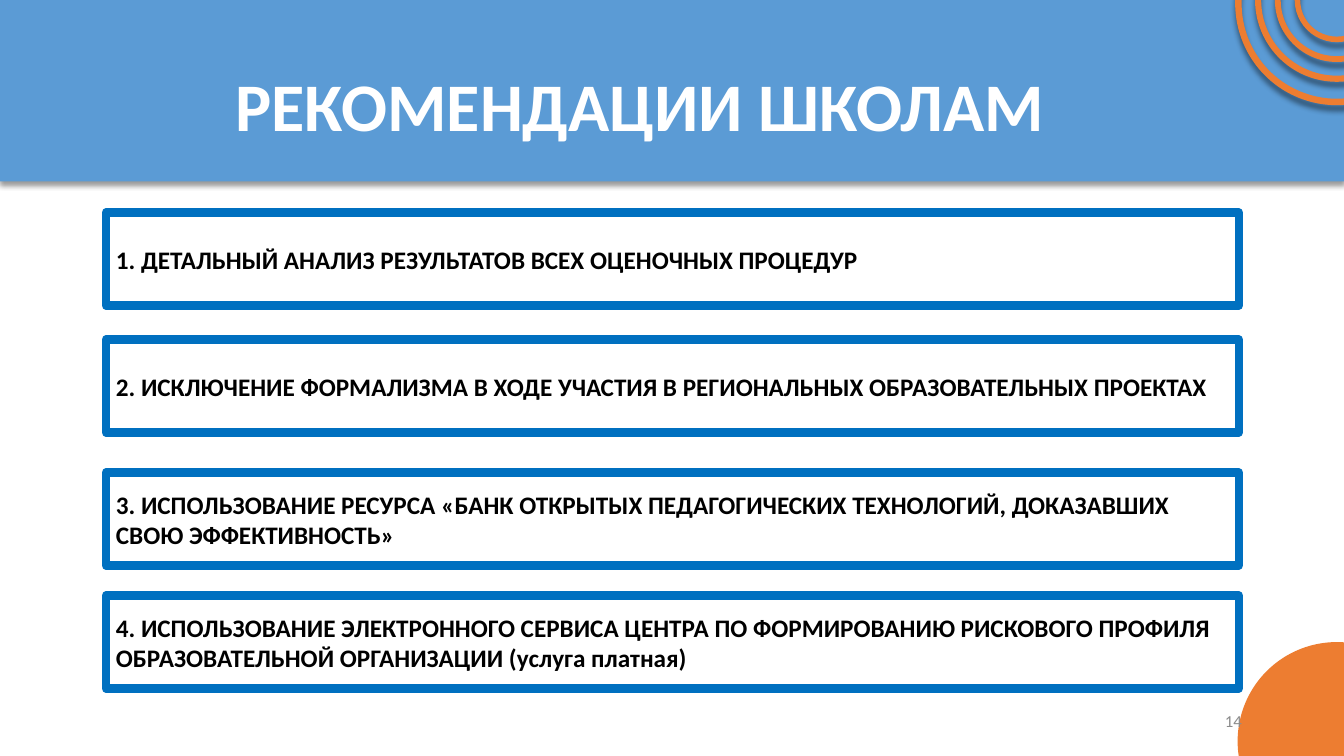
from dataclasses import dataclass

from lxml.etree import SubElement
from pptx import Presentation
from pptx.dml.color import RGBColor as RGB
from pptx.enum.shapes import MSO_SHAPE as SHAPE
from pptx.enum.text import MSO_ANCHOR as ANCHOR, PP_ALIGN as ALIGN
from pptx.oxml.ns import qn
from pptx.util import Cm, Pt


@dataclass(frozen=True)
class Theme:
    """Colours, font and type sizes of the slide."""
    band: str = "5B9BD5"
    accent: str = "ED7D31"
    border: str = "0070C0"
    paper: str = "FFFFFF"
    ink: str = "000000"
    muted: str = "8C8C8C"
    font: str = "Calibri"
    title: float = 48.6
    body: float = 18
    number: float = 12


T = Theme()
RECOMMENDATIONS = (
    (5.36, "1. ДЕТАЛЬНЫЙ АНАЛИЗ РЕЗУЛЬТАТОВ ВСЕХ ОЦЕНОЧНЫХ ПРОЦЕДУР"),
    (8.56, "2. ИСКЛЮЧЕНИЕ ФОРМАЛИЗМА В ХОДЕ УЧАСТИЯ В РЕГИОНАЛЬНЫХ "
           "ОБРАЗОВАТЕЛЬНЫХ ПРОЕКТАХ"),
    (11.91, "3. ИСПОЛЬЗОВАНИЕ РЕСУРСА «БАНК ОТКРЫТЫХ ПЕДАГОГИЧЕСКИХ "
            "ТЕХНОЛОГИЙ, ДОКАЗАВШИХ СВОЮ ЭФФЕКТИВНОСТЬ»"),
    (15.01, "4. ИСПОЛЬЗОВАНИЕ ЭЛЕКТРОННОГО СЕРВИСА ЦЕНТРА ПО ФОРМИРОВАНИЮ "
            "РИСКОВОГО ПРОФИЛЯ ОБРАЗОВАТЕЛЬНОЙ ОРГАНИЗАЦИИ (услуга платная)"),
)


def add_shape(s, kind, box, fill, line=None, width=0):
    """Add a flat preset shape in a box given in centimetres."""
    sp = s.shapes.add_shape(kind, *map(Cm, box))
    sp.fill.solid()
    sp.fill.fore_color.rgb = RGB.from_string(fill)
    if line:
        sp.line.color.rgb = RGB.from_string(line)
        sp.line.width = Pt(width)
    else:
        sp.line.fill.background()
    sp.shadow.inherit = False
    return sp


def add_shadow(sp, blur, dist, alpha):
    """Cast a soft black shadow straight down."""
    effects = sp._element.spPr.find(qn("a:effectLst"))
    shadow = SubElement(effects, qn("a:outerShdw"), blurRad=str(Pt(blur)),
                        dist=str(Pt(dist)), dir="5400000", rotWithShape="0")
    color = SubElement(shadow, qn("a:srgbClr"), val="000000")
    SubElement(color, qn("a:alpha"), val=str(alpha * 1000))


def set_text(sp, text, align, size, color, bold=True):
    """Write one vertically centred paragraph into a shape."""
    tf = sp.text_frame
    tf.word_wrap = True
    tf.vertical_anchor = ANCHOR.MIDDLE
    p = tf.paragraphs[0]
    p.alignment = align
    r = p.add_run()
    r.text = text
    r.font.color.rgb = RGB.from_string(color)
    for name, value in {"name": T.font, "size": Pt(size), "bold": bold}.items():
        setattr(r.font, name, value)


def add_header(s, x, y, w, h):
    """Draw the title band."""
    band = add_shape(s, SHAPE.RECTANGLE, (x, y, w, h), T.band)
    add_shadow(band, 4, 3, 40)
    title = s.shapes.add_textbox(Cm(x + 1.52), Cm(y + 1.32), Cm(29.21), Cm(2.6))
    set_text(title, "РЕКОМЕНДАЦИИ ШКОЛАМ", ALIGN.CENTER, T.title, T.paper)


def add_corners(s, x, y, w, h):
    """Draw the disc and the rings around the right-hand corners."""
    cx = x + w - 0.18
    add_shape(s, SHAPE.OVAL, (cx - 2.5, y + h - 2.87, 5, 5), T.accent)
    for size, drop in ((5, 0.09), (4, 0), (3, 0), (2, 0)):
        box = (cx - size / 2, y + drop - size / 2, size, size)
        ring = add_shape(s, SHAPE.DONUT, box, T.accent, T.accent, 3.5)
        ring.adjustments[0] = 0.008
        add_shadow(ring, 4, 4, 43)


def add_recommendations(s, x, w, h):
    """Stack the framed recommendations."""
    for y, text in RECOMMENDATIONS:
        frame = add_shape(s, SHAPE.RECTANGLE, (x, y, w, h), T.paper, T.border, 6)
        set_text(frame, text, ALIGN.LEFT, T.body, T.ink)


def add_number(s, x, y, w, h):
    """Write the page number."""
    box = s.shapes.add_textbox(*map(Cm, (x, y, w, h)))
    set_text(box, "14", ALIGN.RIGHT, T.number, T.muted, False)


def main():
    """Build and save the slide."""
    width, height = 33.87, 19.05
    prs = Presentation()
    prs.slide_width, prs.slide_height = Cm(width), Cm(height)
    s = prs.slides.add_slide(prs.slide_layouts[6])
    add_header(s, 0, 0, width, 4.57)
    add_corners(s, 0, 0, width, height)
    add_recommendations(s, 2.67, 28.55, 2.34)
    add_number(s, 23.93, 17.65, 7.62, 1.02)
    prs.save("out.pptx")


if __name__ == "__main__":
    main()
